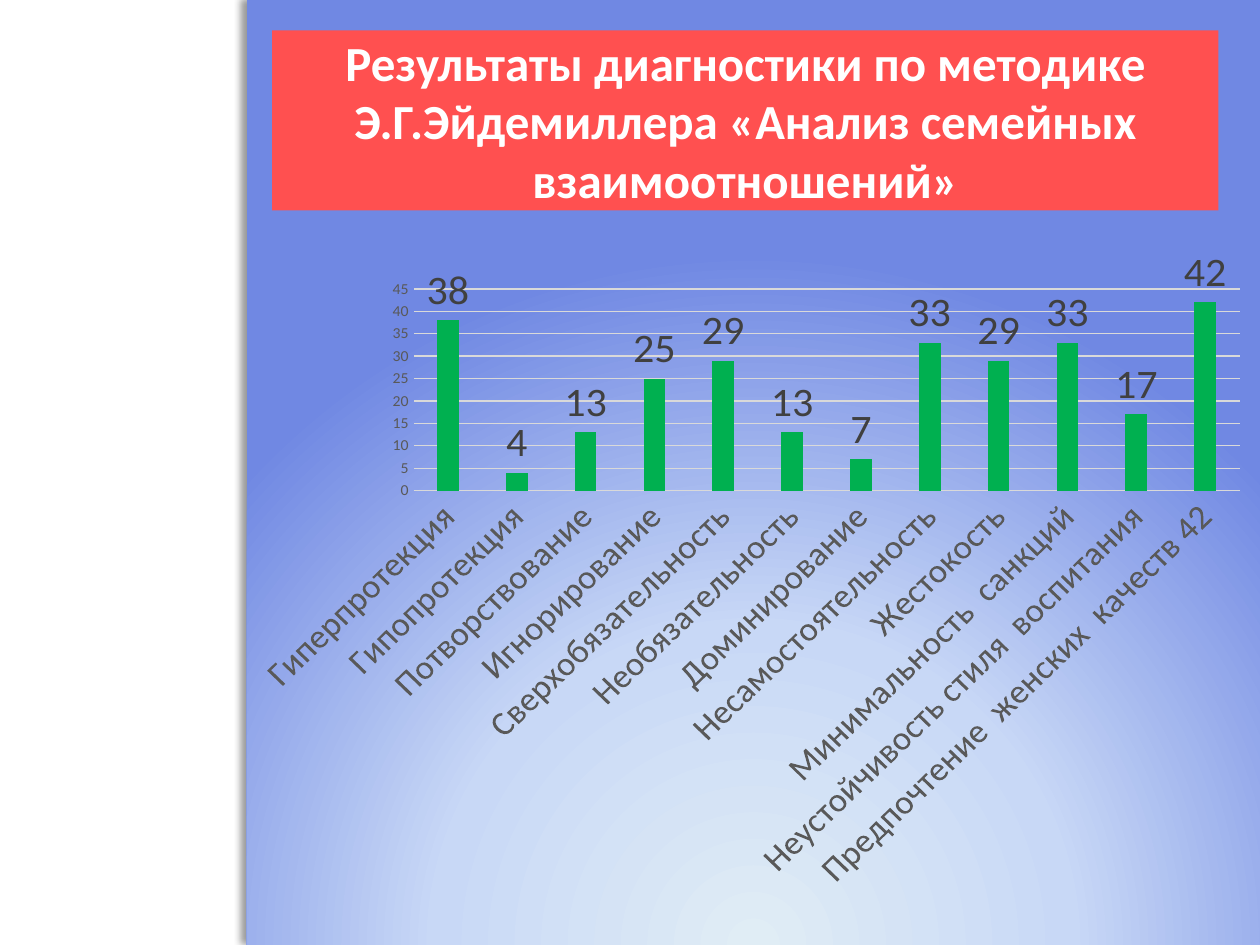
from dataclasses import dataclass

from pptx import Presentation
from pptx.chart.data import CategoryChartData
from pptx.dml.color import RGBColor
from pptx.enum.chart import XL_CHART_TYPE, XL_LABEL_POSITION, XL_TICK_MARK
from pptx.enum.shapes import MSO_SHAPE
from pptx.enum.text import MSO_ANCHOR, MSO_AUTO_SIZE, PP_ALIGN
from pptx.oxml import parse_xml
from pptx.oxml.ns import nsdecls, qn
from pptx.util import Inches, Pt


@dataclass(frozen=True)
class Theme:
    font: str = "Calibri"
    white: str = "FFFFFF"
    banner: str = "FF5050"
    bar: str = "00B050"
    grid: str = "D9D9D9"
    axis_text: str = "595959"
    label_text: str = "404040"
    shadow: str = "000000"
    panel: tuple = ((0, "E0EDF5"), (46, "C8D8F6"), (100, "7088E3"))
    title_size: int = 28
    label_size: int = 24
    category_size: int = 20
    value_size: int = 9
    hairline: float = 0.75


class SlideBuilder:
    def __init__(self, prs, theme):
        self.theme = theme
        self.s = prs.slides.add_slide(prs.slide_layouts[5])
        self.s.background.fill.solid()
        self.s.background.fill.fore_color.rgb = RGBColor.from_string(theme.white)

    def style_font(self, font, size, color, bold=False):
        values = {"name": self.theme.font, "size": Pt(size), "bold": bold}
        for name, value in values.items():
            setattr(font, name, value)
        font.color.rgb = RGBColor.from_string(color)

    def style_line(self, line):
        line.color.rgb = RGBColor.from_string(self.theme.grid)
        line.width = Pt(self.theme.hairline)

    def panel(self, *box):
        sp = self.s.shapes.add_shape(MSO_SHAPE.RECTANGLE, *map(Inches, box))
        sp.line.fill.background()
        sp.shadow.inherit = False
        stops = "".join(
            f'<a:gs pos="{pos * 1000}"><a:srgbClr val="{color}"/></a:gs>'
            for pos, color in self.theme.panel
        )
        spPr = sp._element.spPr
        spPr.find(qn("a:prstGeom")).addnext(parse_xml(
            f'<a:gradFill {nsdecls("a")} rotWithShape="1"><a:gsLst>{stops}</a:gsLst>'
            '<a:path path="circle"><a:fillToRect l="50000" t="130000" r="50000" b="-30000"/>'
            '</a:path></a:gradFill>'
        ))
        spPr.find(qn("a:effectLst")).append(parse_xml(
            f'<a:outerShdw {nsdecls("a")} blurRad="{Pt(4)}" dist="{Pt(3)}" dir="10800000" '
            f'algn="ctr" rotWithShape="0"><a:srgbClr val="{self.theme.shadow}">'
            '<a:alpha val="40000"/></a:srgbClr></a:outerShdw>'
        ))

    def title(self, text, *box):
        sp = self.s.shapes.title
        for name, value in zip(("left", "top", "width", "height"), box):
            setattr(sp, name, Inches(value))
        sp._element.spPr.find(qn("a:xfrm")).addnext(parse_xml(
            f'<a:prstGeom {nsdecls("a")} prst="roundRect"><a:avLst/></a:prstGeom>'
        ))
        sp.fill.solid()
        sp.fill.fore_color.rgb = RGBColor.from_string(self.theme.banner)
        sp.line.fill.background()
        tf = sp.text_frame
        tf.text = text
        values = {
            "word_wrap": True,
            "auto_size": MSO_AUTO_SIZE.NONE,
            "vertical_anchor": MSO_ANCHOR.MIDDLE,
        }
        for name, value in values.items():
            setattr(tf, name, value)
        p = tf.paragraphs[0]
        p.alignment = PP_ALIGN.CENTER
        self.style_font(p.runs[0].font, self.theme.title_size, self.theme.white, True)
        self.s.shapes._spTree.append(sp._element)

    def column_chart(self, points, *box):
        t = self.theme
        data = CategoryChartData()
        data.categories = list(points)
        data.add_series("Series 1", list(points.values()))
        chart = self.s.shapes.add_chart(
            XL_CHART_TYPE.COLUMN_CLUSTERED, *map(Inches, box), data
        ).chart
        chart.has_legend = False
        chart.has_title = False
        chart.font.name = t.font
        chart.font.size = Pt(10)

        plot = chart.plots[0]
        plot.gap_width = 219
        plot.vary_by_categories = False
        series = plot.series[0]
        series.format.fill.solid()
        series.format.fill.fore_color.rgb = RGBColor.from_string(t.bar)
        labels = series.data_labels
        labels.show_value = True
        labels.position = XL_LABEL_POSITION.OUTSIDE_END
        self.style_font(labels.font, t.label_size, t.label_text)

        axes = ((chart.category_axis, t.category_size), (chart.value_axis, t.value_size))
        for axis, size in axes:
            axis.major_tick_mark = XL_TICK_MARK.NONE
            axis.minor_tick_mark = XL_TICK_MARK.NONE
            self.style_font(axis.tick_labels.font, size, t.axis_text)
        category, value = chart.category_axis, chart.value_axis
        self.style_line(category.format.line)
        body = category._element.find(qn("c:txPr")).find(qn("a:bodyPr"))
        body.set("rot", "-2700000")
        body.set("vert", "horz")
        value.minimum_scale, value.maximum_scale, value.major_unit = 0, 45, 5
        value.format.line.fill.background()
        value.has_major_gridlines = True
        self.style_line(value.major_gridlines.format.line)


def main():
    prs = Presentation()
    prs.slide_width, prs.slide_height = Inches(10), Inches(7.5)
    slide = SlideBuilder(prs, Theme())
    slide.panel(1.96, 0, 8.04, 7.5)
    slide.column_chart({
        "Гиперпротекция": 38,
        "Гипопротекция": 4,
        "Потворствование": 13,
        "Игнорирование": 25,
        "Сверхобязательность": 29,
        "Необязательность": 13,
        "Доминирование": 7,
        "Несамостоятельность": 33,
        "Жестокость": 29,
        "Минимальность  санкций": 33,
        "Неустойчивость стиля  воспитания": 17,
        "Предпочтение  женских  качеств 42": 42,
    }, 1.88, 1.97, 8.12, 5.19)
    slide.title(
        "Результаты диагностики по методике Э.Г.Эйдемиллера "
        "«Анализ семейных взаимоотношений»",
        2.16, 0.24, 7.51, 1.43,
    )
    prs.save("out.pptx")


if __name__ == "__main__":
    main()
